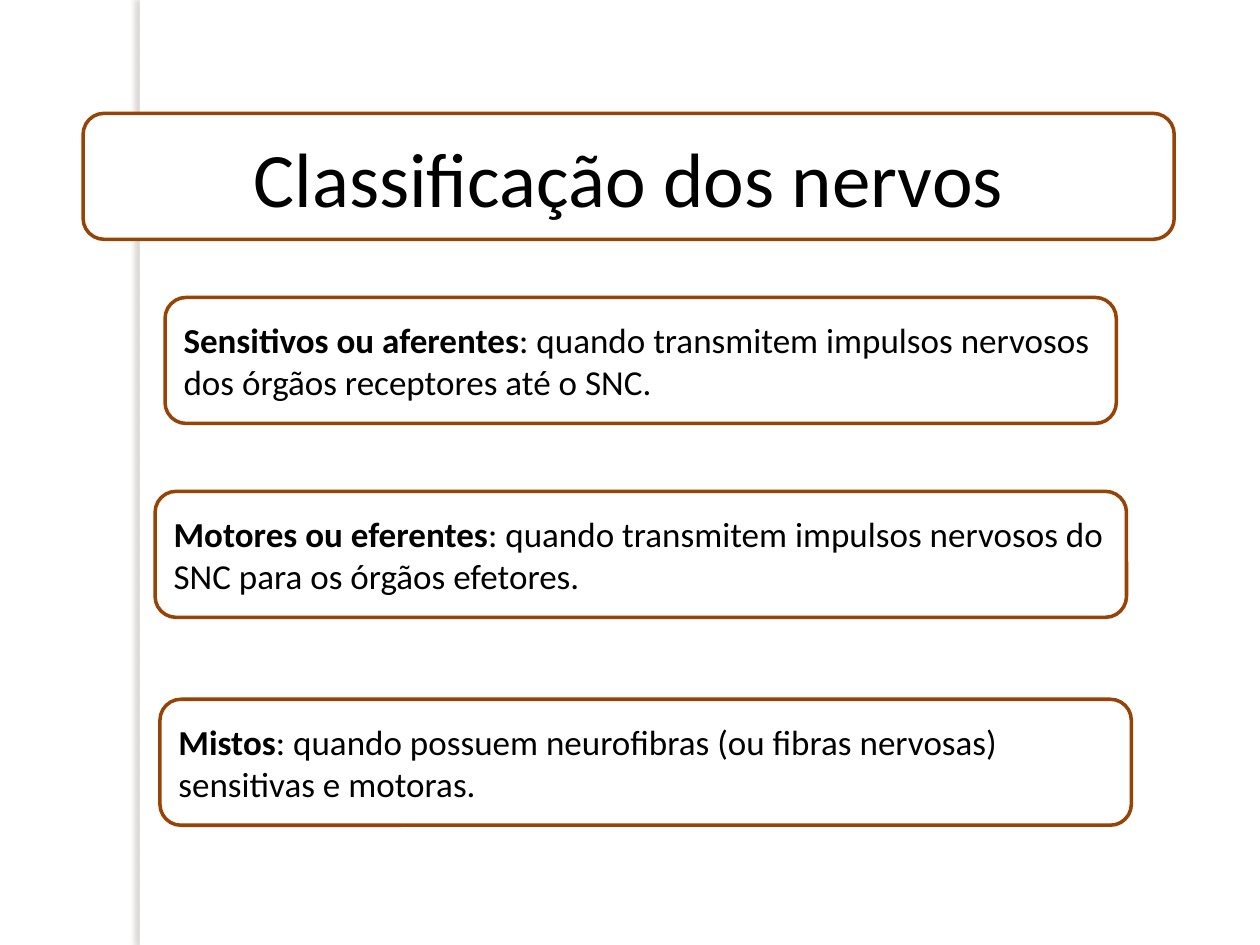
"""Build a slide on the classification of nerves."""
from lxml import etree
from pptx import Presentation
from pptx import util as u
from pptx.dml.color import RGBColor
from pptx.enum import shapes, text
from pptx.oxml import ns

WHITE = RGBColor(0xFF, 0xFF, 0xFF)
BLACK = RGBColor(0, 0, 0)
BROWN = RGBColor(0x96, 0x43, 0x05)
SHADOW = RGBColor(0x73, 0x6F, 0x63)

FONT = "Calibri"
BOX_HEIGHT = 72
TITLE = ("Classificação dos nervos", (47.5, 64.8, 623.5))
NERVES = [
    ("Sensitivos ou aferentes",
     ": quando transmitem impulsos nervosos dos órgãos receptores até o SNC.",
     (94.3, 170, 543.6)),
    ("Motores ou eferentes",
     ": quando transmitem impulsos nervosos do SNC para os órgãos efetores.",
     (88.6, 280.8, 555.1)),
    ("Mistos",
     ": quando possuem neurofibras (ou fibras nervosas) sensitivas e motoras.",
     (91.4, 399.6, 555.1)),
]


def add_panel(slide, kind, left, top, width, height):
    shape = slide.shapes.add_shape(
        kind, u.Pt(left), u.Pt(top), u.Pt(width), u.Pt(height))
    shape.shadow.inherit = False
    shape.fill.solid()
    shape.fill.fore_color.rgb = WHITE
    return shape


def add_strip(slide):
    strip = add_panel(slide, shapes.MSO_SHAPE.RECTANGLE, 79.9, 0, 5.8, 540)
    strip.line.fill.background()
    effects = strip._element.spPr.find(ns.qn("a:effectLst"))
    shadow = etree.SubElement(
        effects, ns.qn("a:outerShdw"), blurRad=str(u.Pt(3)),
        dist=str(u.Pt(3)), dir="10800000", algn="tl", rotWithShape="0")
    color = etree.SubElement(shadow, ns.qn("a:srgbClr"), val=str(SHADOW))
    etree.SubElement(color, ns.qn("a:alpha"), val="25000")


def add_box(slide, position, runs, size, alignment):
    box = add_panel(
        slide, shapes.MSO_SHAPE.ROUNDED_RECTANGLE, *position, BOX_HEIGHT)
    box.line.color.rgb = BROWN
    box.line.width = u.Pt(2)
    frame = box.text_frame
    frame.word_wrap = True
    frame.vertical_anchor = text.MSO_ANCHOR.MIDDLE
    paragraph = frame.paragraphs[0]
    paragraph.alignment = alignment
    for words, bold in runs:
        run = paragraph.add_run()
        run.text = words
        run.font.name = FONT
        run.font.size = u.Pt(size)
        run.font.bold = bold
        run.font.color.rgb = BLACK


def main():
    presentation = Presentation()
    presentation.slide_width = u.Pt(720)
    presentation.slide_height = u.Pt(540)
    slide = presentation.slides.add_slide(presentation.slide_layouts[6])
    add_strip(slide)
    title, position = TITLE
    add_box(slide, position, [(title, False)], 44, text.PP_ALIGN.CENTER)
    for name, description, position in NERVES:
        runs = [(name, True), (description, False)]
        add_box(slide, position, runs, 20, text.PP_ALIGN.LEFT)
    presentation.save("out.pptx")


if __name__ == "__main__":
    main()
